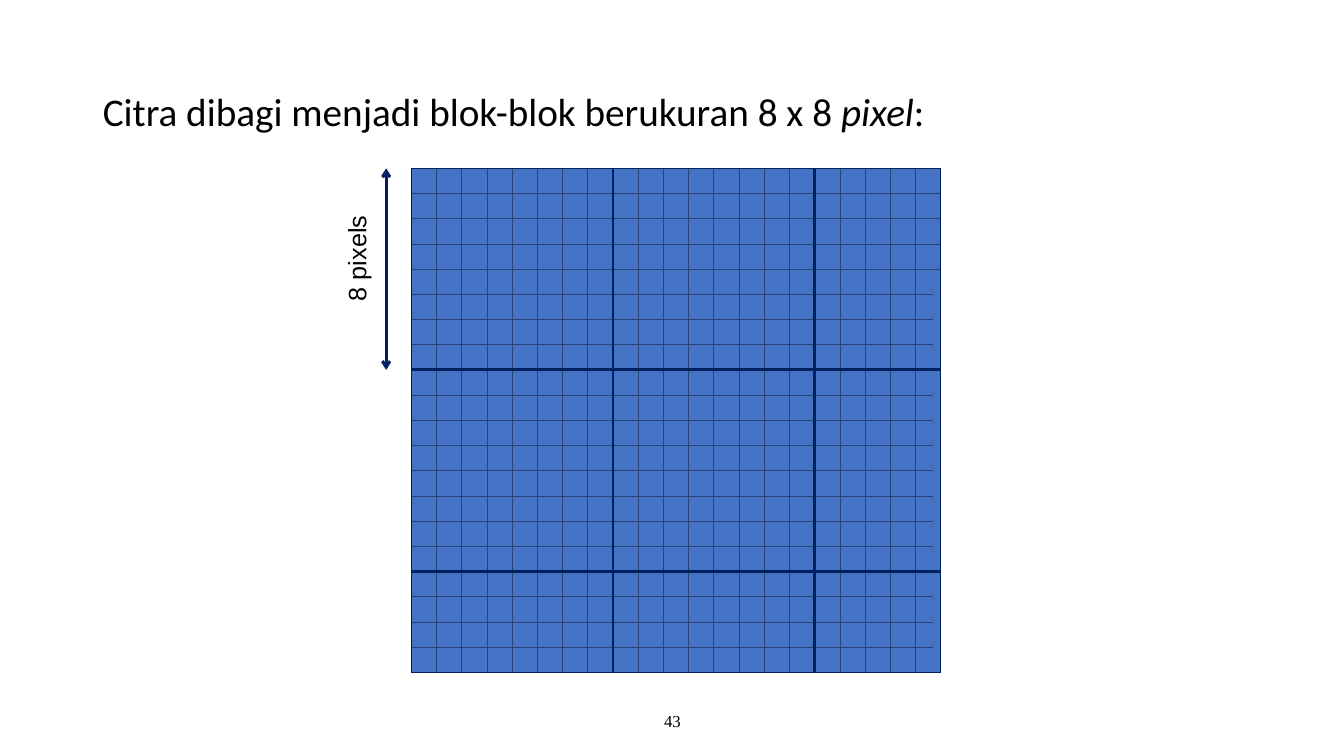
from lxml import etree
from pptx import Presentation
from pptx.dml.color import RGBColor
from pptx.enum.shapes import MSO_CONNECTOR, MSO_SHAPE
from pptx.enum.text import MSO_ANCHOR, MSO_AUTO_SIZE, PP_ALIGN
from pptx.oxml.ns import qn
from pptx.util import Inches, Pt

STRAIGHT = MSO_CONNECTOR.STRAIGHT
RECT = MSO_SHAPE.RECTANGLE
MIDDLE = MSO_ANCHOR.MIDDLE
LEFT, CENTER = PP_ALIGN.LEFT, PP_ALIGN.CENTER
NO_FIT = MSO_AUTO_SIZE.NONE

BLACK, BLUE, NAVY = "000000", "4472C4", "002060"
X, Y, WIDE, HIGH = 4.08, 1.67, 5.25, 5
CELL, BLOCK = 0.25, 8
COLS, ROWS = 21, 20

deck = Presentation()
deck.slide_width, deck.slide_height = Inches(13.33), Inches(7.5)
slide = deck.slides.add_slide(deck.slide_layouts[5])
shapes = slide.shapes


def add_line(x1, y1, x2, y2, color, width):
    line = shapes.add_connector(
        STRAIGHT, Inches(x1), Inches(y1), Inches(x2), Inches(y2))
    line.line.color.rgb = RGBColor.from_string(color)
    line.line.width = Pt(width)
    etree.SubElement(line._element.spPr, qn("a:effectLst"))
    return line


def add_run(para, text, size, font, italic=False):
    run = para.add_run()
    run.text = text
    run.font.size = Pt(size)
    run.font.name = font
    run.font.italic = italic
    run.font.color.rgb = RGBColor.from_string(BLACK)


# Title
title = shapes.title
title.left, title.top = Inches(0.92), Inches(0.4)
title.width, title.height = Inches(11.5), Inches(1.45)
frame = title.text_frame
frame.vertical_anchor = MIDDLE
frame.auto_size = NO_FIT
para = frame.paragraphs[0]
para.alignment = LEFT
para.line_spacing = 0.9
for text, italic in (("Citra dibagi menjadi blok-blok berukuran 8 x 8 ", False),
                     ("pixel", True), (":", False)):
    add_run(para, text, 28, "Calibri", italic)

# Page number
page = shapes.add_textbox(Inches(4.42), Inches(6.95), Inches(4.5), Inches(0.4))
page.text_frame.word_wrap = True
page.text_frame.vertical_anchor = MIDDLE
para = page.text_frame.paragraphs[0]
para.alignment = CENTER
add_run(para, "43", 12, "Times New Roman")

# Pixel grid under a translucent sheet that carries the 8 x 8 blocks
for edge in (BLACK, NAVY):
    sheet = shapes.add_shape(RECT, Inches(X), Inches(Y), Inches(WIDE), Inches(HIGH))
    sheet.shadow.inherit = False
    sheet.fill.solid()
    sheet.fill.fore_color.rgb = RGBColor.from_string(BLUE)
    sheet.line.color.rgb = RGBColor.from_string(edge)
    sheet.line.width = Pt(1)
    if edge == BLACK:
        step, width = 1, 0.5
    else:
        step, width = BLOCK, 2
        tint = sheet._element.spPr.find(qn("a:solidFill"))[0]
        etree.SubElement(tint, qn("a:alpha"), val="60000")
    for col in range(step, COLS, step):
        x = X + col * CELL
        add_line(x, Y, x, Y + HIGH, edge, width)
    for row in range(step, ROWS, step):
        y = Y + row * CELL
        short = edge == BLACK and row > 4
        add_line(X, y, 9.25 if short else X + WIDE, y, edge, width)

# Height of one block
arrow = add_line(3.83, Y, 3.83, Y + BLOCK * CELL, NAVY, 2)
for end in ("a:headEnd", "a:tailEnd"):
    etree.SubElement(arrow.line._get_or_add_ln(), qn(end), type="arrow")

label = shapes.add_textbox(Inches(2.95), Inches(2.3), Inches(1.17), Inches(0.4))
label.rotation = 270
label.text_frame.word_wrap = True
add_run(label.text_frame.paragraphs[0], "8 pixels", 18, "Arial")

deck.save("out.pptx")
